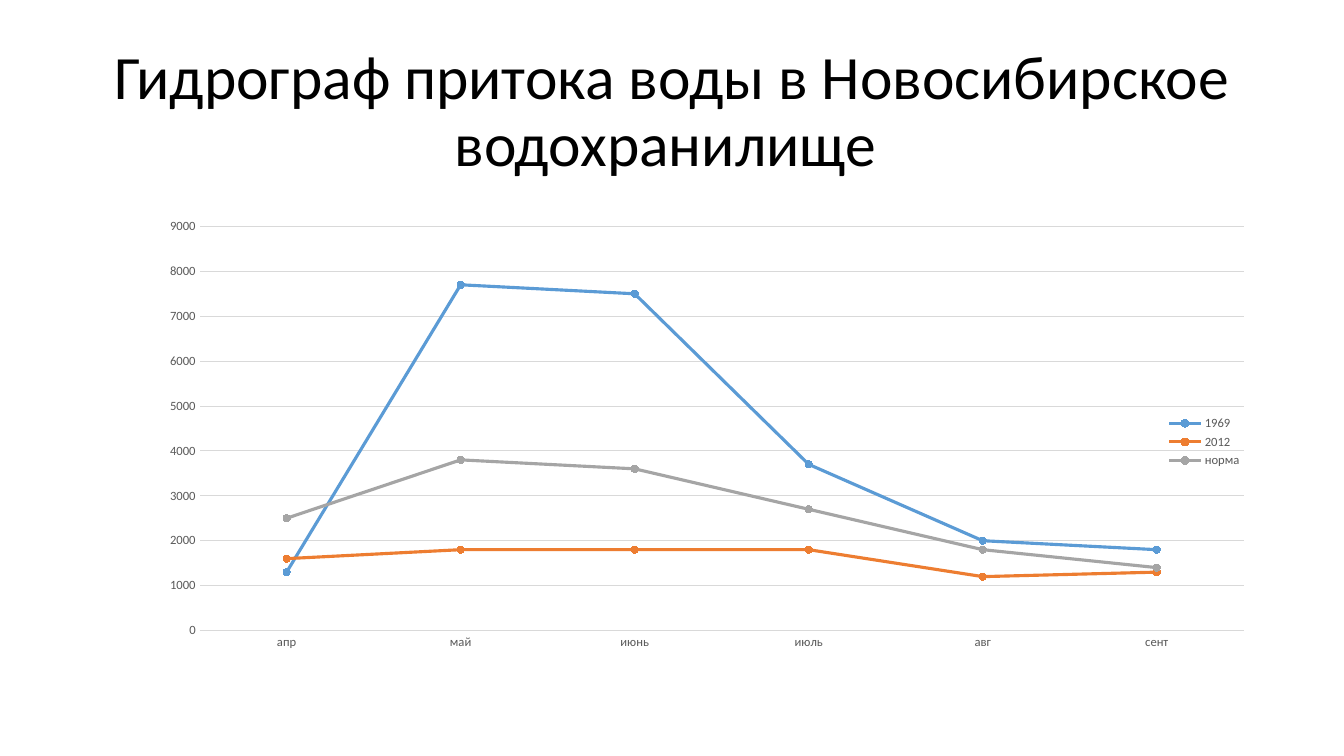
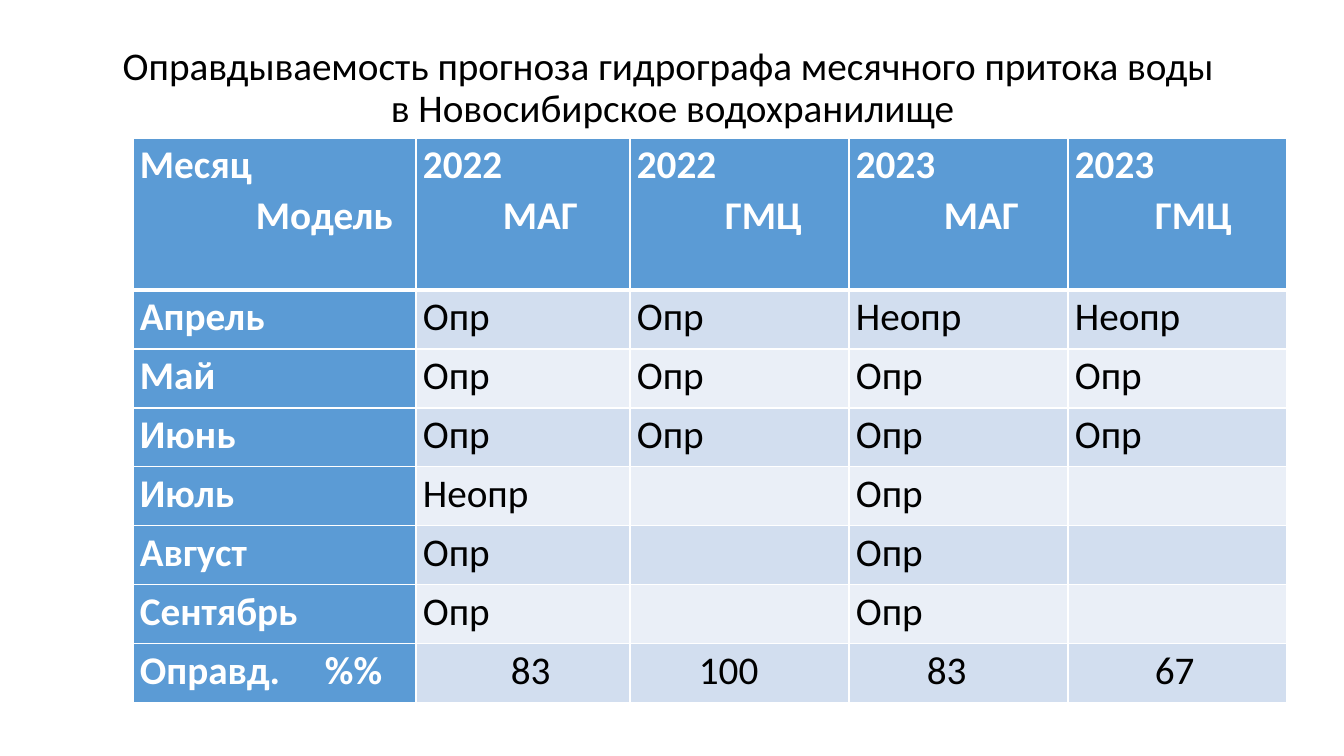
from dataclasses import dataclass

from lxml import etree
from pptx import Presentation
from pptx.chart.data import CategoryChartData
from pptx.dml.color import RGBColor
from pptx.enum.chart import XL_CHART_TYPE, XL_LEGEND_POSITION, XL_MARKER_STYLE, XL_TICK_MARK
from pptx.enum.text import MSO_ANCHOR, MSO_AUTO_SIZE, PP_ALIGN
from pptx.oxml.ns import qn
from pptx.util import Pt

LINE_CHART = XL_CHART_TYPE.LINE_MARKERS
RIGHT = XL_LEGEND_POSITION.RIGHT
CIRCLE = XL_MARKER_STYLE.CIRCLE
NO_TICK = XL_TICK_MARK.NONE
TOP, MIDDLE = MSO_ANCHOR.TOP, MSO_ANCHOR.MIDDLE
NO_FIT = MSO_AUTO_SIZE.NONE
CENTER = PP_ALIGN.CENTER

WIDE, HIGH = 1344, 756
SCALE = 12192000 / WIDE
TITLE_ONLY = 5


def px(n):
    return round(n * SCALE)


def rgb(code):
    return RGBColor.from_string(code)


@dataclass(frozen=True)
class Theme:
    font: str = "Calibri"
    ink: str = "000000"
    paper: str = "FFFFFF"
    head: str = "5B9BD5"
    bands: tuple = ("D2DEEF", "EAEFF7")
    lines: tuple = ("5B9BD5", "ED7D31", "A5A5A5")
    grid: str = "D9D9D9"
    label: str = "595959"
    big: int = 44
    mid: int = 28
    base: int = 10
    small: int = 9


class Deck:
    def __init__(self, theme):
        self.theme = theme
        self.prs = Presentation()
        self.prs.slide_width, self.prs.slide_height = px(WIDE), px(HIGH)
        self.slide = None

    def style(self, font, size, color, bold=False):
        font.name, font.size, font.bold = self.theme.font, Pt(size), bold
        font.color.rgb = rgb(color)

    def add_text(self, para, text, size, color, bold=False):
        run = para.add_run()
        run.text = text
        self.style(run.font, size, color, bold)

    def title(self, lines, size, height):
        """Start a slide and fill its title."""
        self.slide = self.prs.slides.add_slide(self.prs.slide_layouts[TITLE_ONLY])
        box = self.slide.shapes.title
        box.left, box.top, box.width, box.height = px(93), px(40), px(1159), px(height)
        frame = box.text_frame
        frame.auto_size, frame.word_wrap = NO_FIT, True
        frame.vertical_anchor = MIDDLE
        para = frame.paragraphs[0]
        para.alignment, para.line_spacing = CENTER, 0.9
        for i, line in enumerate(lines):
            if i:
                para.add_line_break()
            self.add_text(para, line, size, self.theme.ink)

    def chart(self, box, plot, months, flows, top, step):
        theme = self.theme
        data = CategoryChartData(number_format="0")
        data.categories = months
        for name, vals in flows.items():
            data.add_series(name, vals)
        chart = self.slide.shapes.add_chart(LINE_CHART, *map(px, box), data).chart
        chart.has_title = False
        self.style(chart.font, theme.base, theme.ink)

        # Series
        chart.plots[0].vary_by_categories = False
        for row, hue in zip(chart.plots[0].series, theme.lines):
            row.smooth = False
            row.format.line.color.rgb = rgb(hue)
            row.format.line.width = Pt(2.25)
            mark = row.marker
            mark.style, mark.size = CIRCLE, 5
            mark.format.fill.solid()
            mark.format.fill.fore_color.rgb = rgb(hue)
            mark.format.line.color.rgb = rgb(hue)

        # Axes and grid
        cat, val = chart.category_axis, chart.value_axis
        for axis in (cat, val):
            axis.major_tick_mark = axis.minor_tick_mark = NO_TICK
            self.style(axis.tick_labels.font, theme.small, theme.label)
        val.minimum_scale, val.maximum_scale, val.major_unit = 0, top, step
        val.has_major_gridlines = True
        val.format.line.fill.background()
        for line in (cat.format.line, val.major_gridlines.format.line):
            line.color.rgb = rgb(theme.grid)
            line.width = Pt(0.75)

        # Legend over the plot
        chart.has_legend = True
        chart.legend.position = RIGHT
        chart.legend.include_in_layout = True
        self.style(chart.legend.font, theme.small, theme.label)
        self.place(chart, plot)

    def place(self, chart, plot):
        """Fix the inner plot area as shares of the chart."""
        area = chart.plots[0]._element.getparent()
        for old in area.findall(qn("c:layout")):
            area.remove(old)
        layout = etree.Element(qn("c:layout"))
        area.insert(0, layout)
        hand = etree.SubElement(layout, qn("c:manualLayout"))
        pairs = [("layoutTarget", "inner"), ("xMode", "edge"), ("yMode", "edge")]
        for tag, val in pairs + list(zip("xywh", plot)):
            etree.SubElement(hand, qn("c:" + tag)).set("val", str(val))

    def table(self, left, top, cols, rows, cells):
        theme = self.theme
        frame = self.slide.shapes.add_table(
            len(rows), len(cols), px(left), px(top), px(sum(cols)), px(sum(rows)))
        table = frame.table
        table.first_row = table.horz_banding = False
        for col, width in zip(table.columns, cols):
            col.width = px(width)
        for row, height in zip(table.rows, rows):
            row.height = px(height)
        for r, row in enumerate(cells):
            for c, lines in enumerate(row):
                head = r == 0 or c == 0
                fill = theme.head if head else theme.bands[(r - 1) % 2]
                self.cell(table.cell(r, c), lines, fill, head)
                self.edge(table.cell(r, c), 3 if r == 1 else 1, 3 if r == 0 else 1)

    def cell(self, cell, lines, fill, head):
        """Fill a cell; each line is (text, indent, tab stop)."""
        theme = self.theme
        cell.fill.solid()
        cell.fill.fore_color.rgb = rgb(fill)
        cell.margin_left = cell.margin_right = px(7)
        cell.margin_top = cell.margin_bottom = 0
        cell.vertical_anchor = TOP
        for i, (text, dent, stop) in enumerate(lines):
            frame = cell.text_frame
            para = frame.add_paragraph() if i else frame.paragraphs[0]
            props = para._p.get_or_add_pPr()
            props.set("marL", str(px(dent)))
            if stop:
                tabs = etree.SubElement(props, qn("a:tabLst"))
                etree.SubElement(tabs, qn("a:tab"), pos=str(px(stop)), algn="l")
            para.line_spacing = 1.07
            self.add_text(para, text, theme.mid, theme.paper if head else theme.ink, head)

    def edge(self, cell, top, low):
        """Draw the cell borders, widths in points."""
        props = cell._tc.get_or_add_tcPr()
        for i, (side, width) in enumerate(zip("LRTB", (1, 1, top, low))):
            line = etree.Element(qn("a:ln" + side), w=str(int(Pt(width))))
            fill = etree.SubElement(line, qn("a:solidFill"))
            etree.SubElement(fill, qn("a:srgbClr"), val=self.theme.paper)
            props.insert(i, line)


def plain(text):
    return [(text, 0, 0)] if text else []


def main():
    theme = Theme()
    deck = Deck(theme)

    # Inflow chart
    deck.title(["Гидрограф притока воды в Новосибирское водохранилище "], theme.big, 146)
    flows = {
        "1969": (1300, 7700, 7500, 3700, 2000, 1800),
        "2012": (1600, 1800, 1800, 1800, 1200, 1300),
        "норма": (2500, 3800, 3600, 2700, 1800, 1400),
    }
    months = ("апр", "май", "июнь", "июль", "авг", "сент")
    deck.chart((93, 202, 1159, 480), (0.092, 0.051, 0.901, 0.842),
               months, flows, 9000, 1000)

    # Forecast table
    deck.title(["Оправдываемость прогноза гидрографа месячного притока воды ",
                "в Новосибирское водохранилище"], theme.mid, 97)
    heads = [("Месяц", "Модель", 116), ("2022", "МАГ", 80), ("2022", "ГМЦ", 88),
             ("2023", "МАГ", 88), ("2023", "ГМЦ", 80)]
    yes, no = "Опр", "Неопр"
    marks = [
        ("Апрель", yes, yes, no, no),
        ("Май", yes, yes, yes, yes),
        ("Июнь", yes, yes, yes, yes),
        ("Июль", no, "", yes, ""),
        ("Август", yes, "", yes, ""),
        ("Сентябрь", yes, "", yes, ""),
    ]
    rates = [("83", 88), ("100", 62), ("83", 71), ("67", 80)]
    cells = [[[(year, 0, 0), (model, dent, 0)] for year, model, dent in heads]]
    cells += [[plain(text) for text in row] for row in marks]
    cells.append([[("Оправд.\t%%", 0, 185)]] + [[(rate, dent, 0)] for rate, dent in rates])
    deck.table(133, 138, [283, 214] + [219] * 3, [152] + [59] * 7, cells)

    deck.prs.save("out.pptx")


if __name__ == "__main__":
    main()
